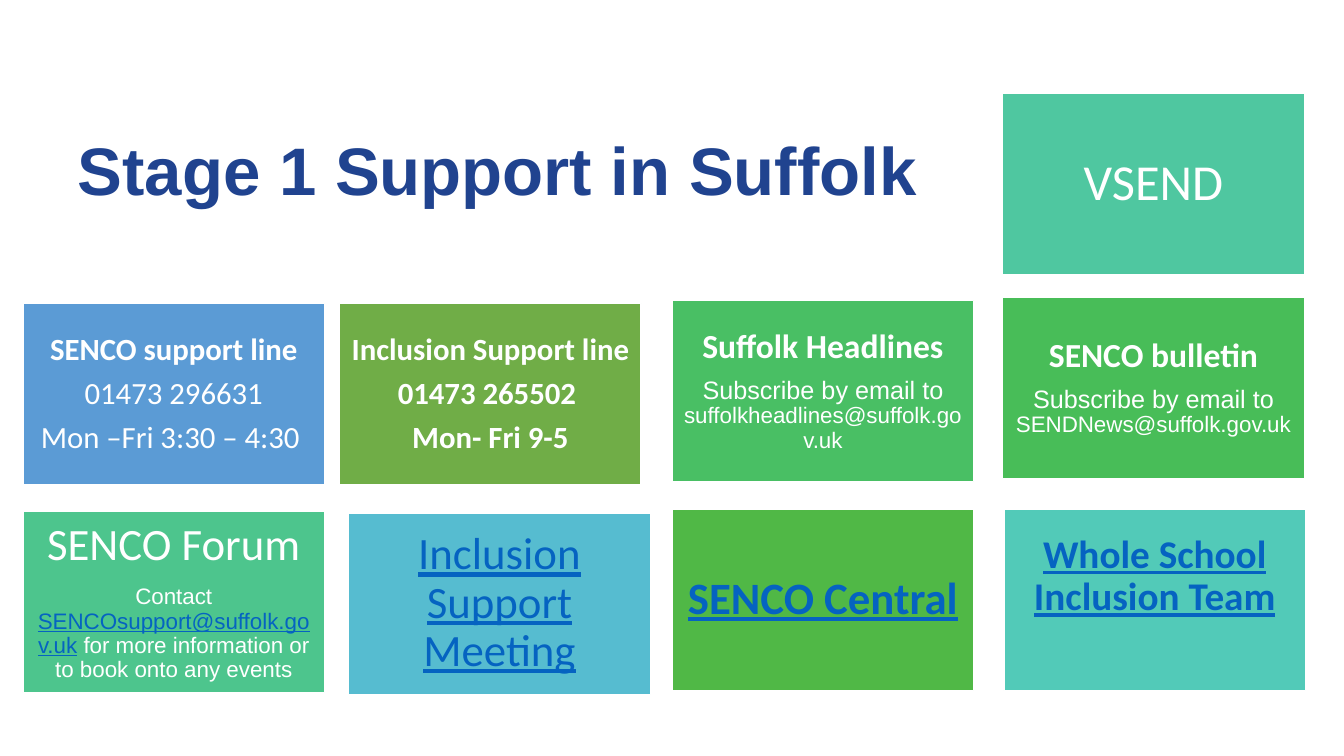
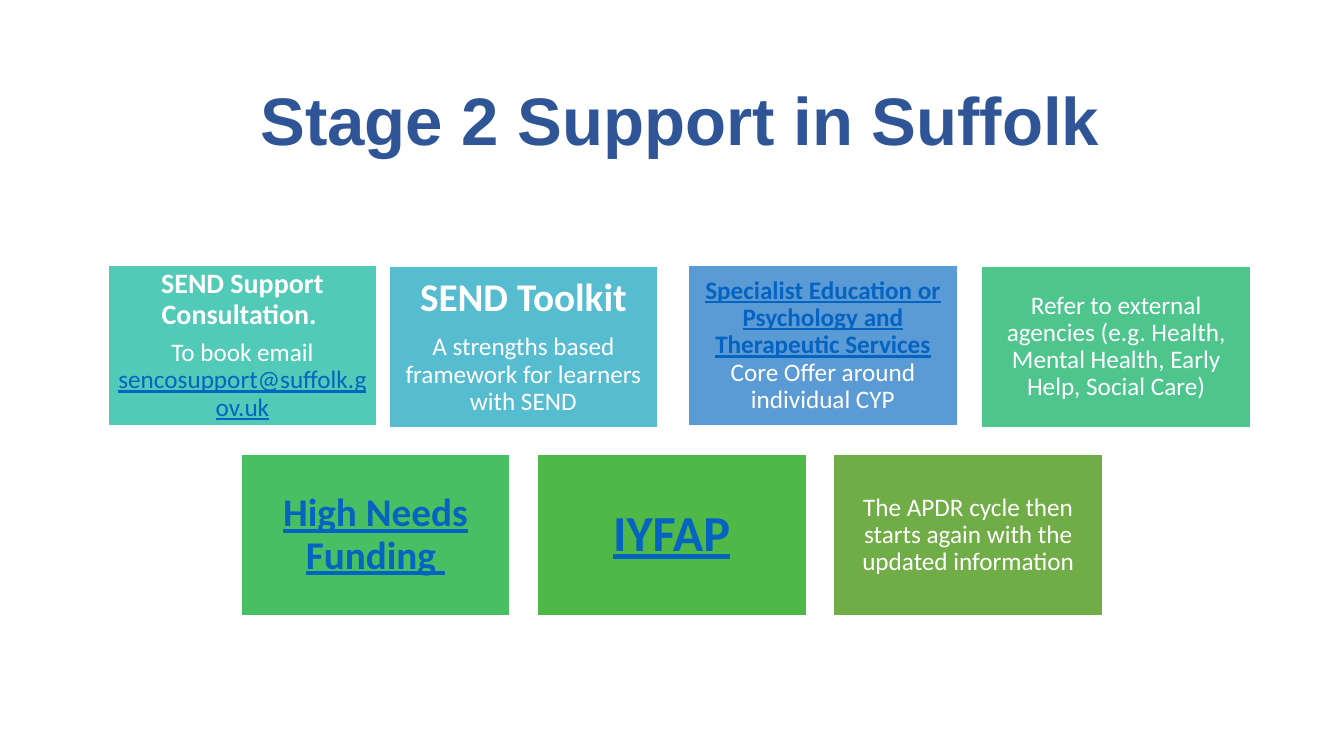
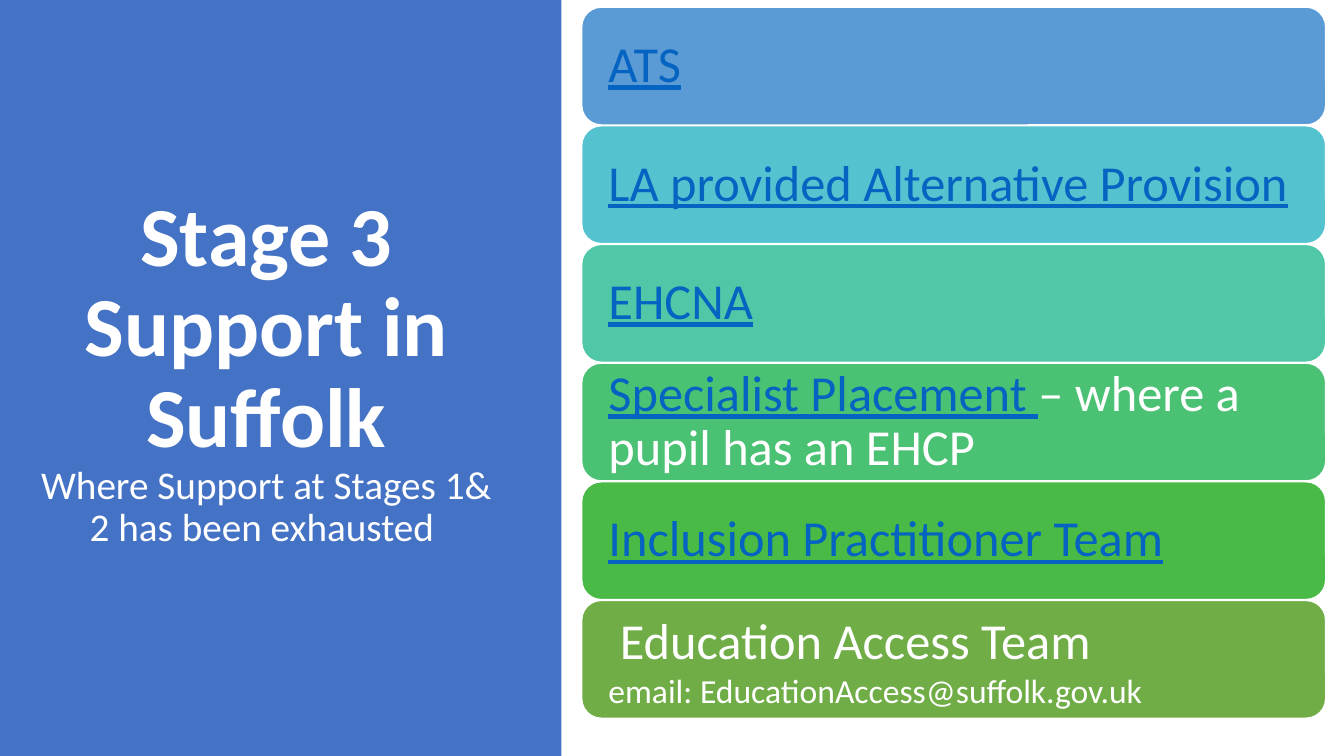
from dataclasses import dataclass

from pptx import Presentation
from pptx.dml.color import RGBColor
from pptx.enum import shapes, text
from pptx.util import Cm, Pt

WHITE, LINK = "FFFFFF", "0563C1"
BLUE, CYAN, TURQUOISE, SEA = "5B9BD5", "56BCD0", "52CAB8", "4DC58D"
EMERALD, GREEN, OLIVE = "49BF64", "50B846", "70AD47"
SLIDE_WIDTH, SLIDE_HEIGHT = 33.87, 19.05
RECTANGLE = shapes.MSO_SHAPE.RECTANGLE
ROUNDED = shapes.MSO_SHAPE.ROUNDED_RECTANGLE


def rgb(value):
    return RGBColor.from_string(value)


@dataclass
class Span:
    words: str
    size: float
    bold: bool = False
    color: str = WHITE
    font: str = "Calibri"


def link(words, size, bold=False, font="Calibri"):
    return Span(words, size, bold, LINK, font)


def arial(words, size):
    return Span(words, size, font="Arial")


class Board:
    """Holds the deck, the current page and the shared style."""

    def __init__(self):
        self.deck = Presentation()
        self.deck.slide_width = Cm(SLIDE_WIDTH)
        self.deck.slide_height = Cm(SLIDE_HEIGHT)
        self.page = None

    def new_page(self):
        self.page = self.deck.slides.add_slide(self.deck.slide_layouts[6])

    def add_text(self, box, paragraphs, centred=True, spacing=0.9, gap=0.0):
        """Fill a box; gap is the space after, as a share of the text size."""
        frame = box.text_frame
        frame.word_wrap = True
        frame.vertical_anchor = text.MSO_ANCHOR.MIDDLE
        for index, spans in enumerate(paragraphs):
            para = frame.paragraphs[0] if index == 0 else frame.add_paragraph()
            para.alignment = text.PP_ALIGN.CENTER if centred else text.PP_ALIGN.LEFT
            para.line_spacing = spacing
            para.space_after = Pt(round(gap * spans[0].size, 1))
            for span in spans:
                run = para.add_run()
                run.text = span.words
                run.font.name = span.font
                run.font.size = Pt(span.size)
                run.font.bold = span.bold
                run.font.underline = span.color == LINK
                run.font.color.rgb = rgb(span.color)

    def title(self, left, top, width, height, *paragraphs):
        box = self.page.shapes.add_textbox(Cm(left), Cm(top), Cm(width), Cm(height))
        self.add_text(box, paragraphs)

    def block(self, kind, left, top, width, height, fill, line=WHITE):
        box = self.page.shapes.add_shape(kind, Cm(left), Cm(top), Cm(width), Cm(height))
        box.shadow.inherit = False
        box.fill.solid()
        box.fill.fore_color.rgb = rgb(fill)
        box.line.color.rgb = rgb(line)
        box.line.width = Pt(1)
        return box

    def inset(self, box, margin, extra_bottom=0.0):
        frame = box.text_frame
        frame.margin_left = frame.margin_right = frame.margin_top = Cm(margin)
        frame.margin_bottom = Cm(margin + extra_bottom)

    def tile(self, left, top, size, fill, paragraphs, lift=0.0):
        """Rectangle whose inset grows with the size of its first line."""
        box = self.block(RECTANGLE, left, top, *size, fill)
        self.inset(box, round(paragraphs[0][0].size * 0.0106, 2), lift)
        self.add_text(box, paragraphs, gap=0.35)

    def bar(self, left, top, width, height, fill, paragraphs, spacing):
        box = self.block(ROUNDED, left, top, width, height, fill)
        self.inset(box, 0.53)
        self.add_text(box, paragraphs, centred=False, spacing=spacing)


def stage_one(board):
    board.new_page()
    size = (7.6, 4.57)
    board.title(0.58, 2.64, 23.93, 3.48,
                [Span("Stage 1 Support in Suffolk", 48, True, "20438F", "Arial")])

    # Contact lines and bulletins
    board.tile(0.58, 7.65, size, BLUE, [
        [Span("SENCO support line", 22, True)],
        [Span("01473 296631", 22)],
        [Span("Mon –Fri 3:30 – 4:30 ", 22)]])
    board.tile(8.56, 7.65, size, OLIVE, [
        [Span(words, 22, True)]
        for words in ("Inclusion Support line ", "01473 265502 ", "Mon- Fri 9-5")])
    for left, top, fill, heading, address in (
            (16.94, 7.57, EMERALD, "Suffolk Headlines", "suffolkheadlines@suffolk.gov.uk"),
            (25.27, 7.49, "48BD58", "SENCO bulletin", "SENDNews@suffolk.gov.uk")):
        board.tile(left, top, size, fill, [
            [Span(heading, 24, True)],
            [arial("Subscribe by email to ", 18), arial(address, 16)]])
    board.tile(25.27, 2.36, size, "4FC7A0", [[Span("VSEND", 36)]])

    # Forum, meeting and teams
    board.tile(0.58, 12.88, size, SEA, [
        [Span("SENCO Forum", 32)],
        [arial("Contact ", 16),
         link("SENCOsupport@suffolk.gov.uk", 16, font="Arial"),
         arial(" for more information or to book onto any events", 16)]])
    board.tile(8.79, 12.93, size, CYAN, [[link("Inclusion Support Meeting", 32)]])
    board.tile(16.94, 12.83, size, GREEN, [[link("SENCO Central", 32, True)]])
    board.tile(25.3, 12.83, size, TURQUOISE,
               [[link("Whole School Inclusion Team", 28, True)]], lift=1.15)


def stage_two(board):
    board.new_page()
    size = (6.78, 4.06)
    board.title(2.54, 1.55, 29.21, 3.15,
                [Span("Stage 2 Support in Suffolk", 48, True, "2F5597", "Arial")])

    # Upper row
    board.tile(2.72, 6.68, size, TURQUOISE, [
        [Span("SEND Support Consultation. ", 20, True)],
        [Span("To book email ", 18), link("sencosupport@suffolk.gov.uk", 18)]])
    board.tile(9.8, 6.71, size, CYAN, [
        [Span("SEND Toolkit", 28, True)],
        [Span("A strengths based framework for learners with SEND", 18)]])
    board.tile(17.35, 6.68, size, BLUE, [
        [link("Specialist Education or Psychology and Therapeutic Services", 18, True),
         Span(" Core Offer around individual CYP", 18)]])
    board.tile(24.74, 6.71, size, SEA, [
        [Span("Refer to external agencies (e.g. Health, Mental Health, "
              "Early Help, Social Care)", 18)]])

    # Lower row, evenly spaced
    lower_row = (
        (EMERALD, link("High Needs Funding ", 28, True)),
        (GREEN, link("IYFAP", 36, True)),
        (OLIVE, Span("The APDR cycle then starts again with the updated information", 18)))
    for column, (fill, span) in enumerate(lower_row):
        board.tile(6.07 + 7.47 * column, 11.46, size, fill, [[span]])


def stage_three(board):
    board.new_page()

    # Title panel
    panel = board.block(RECTANGLE, 0, 0, 14.15, SLIDE_HEIGHT, "4472C4")
    panel.line.fill.background()
    board.title(0.46, 1.73, 12.5, 15.29,
                [Span("Stage 3 Support in Suffolk", 60, True)],
                [Span("Where Support at Stages 1& 2 has been exhausted ", 28)])

    # Stack of services
    services = (
        (BLUE, [[link("ATS", 36)]]),
        ("55C3CF", [[link("LA provided Alternative Provision", 36)]]),
        ("50C8A7", [[link("EHCNA", 36)]]),
        ("4BC174", [[link("Specialist Placement ", 36),
                     Span("– where a pupil has an EHCP", 36)]]),
        ("4ABA46", [[link("Inclusion Practitioner Team", 36)]]),
        (OLIVE, [[Span(" Education Access Team", 36)],
                 [Span("email: EducationAccess@suffolk.gov.uk", 24)]]))
    for row, (fill, paragraphs) in enumerate(services):
        spacing = 0.9 if len(paragraphs) == 1 else 1.0
        board.bar(14.66, 0.18 + 2.99 * row, 18.75, 2.97, fill, paragraphs, spacing)


def main():
    board = Board()
    stage_one(board)
    stage_two(board)
    stage_three(board)
    board.deck.save("out.pptx")


if __name__ == "__main__":
    main()
